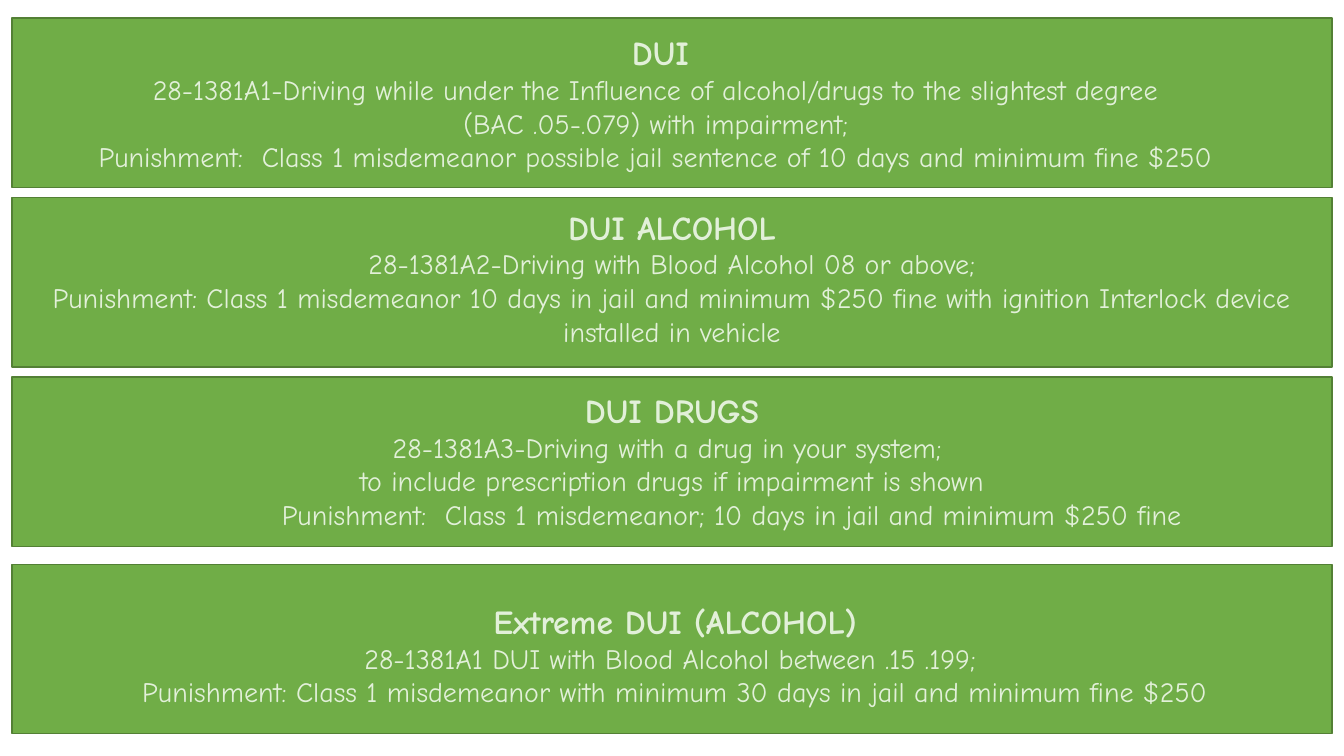
import pptx
import pptx.util
import pptx.dml.color
import pptx.enum.shapes
import pptx.enum.text

WIDTH, HEIGHT = 13.33, 7.5
FONT = "Comic Neue"
GREEN, DARK_GREEN, PALE_GREEN = "70AD47", "538035", "E2F0D9"
PANEL_LEFT, PANEL_WIDTH, PANEL_HEIGHT = 0.12, 13.09, 1.68
LAST_LINE_INDENT = 1.19

# panel top, text place (left, top, width, height), heading, lines, indent of last line
OFFENSES = [
    (0.18, (0.24, 0.27, 12.62, 1.82), "DUI", [
        "28-1381A1-Driving while under the Influence of alcohol/drugs to the slightest degree ",
        "(BAC .05-.079) with impairment; ",
        "Punishment:  Class 1 misdemeanor possible jail sentence of 10 days and minimum fine $250 ",
    ], 0),
    (1.96, (0.18, 2.0, 12.97, 1.82), "DUI ALCOHOL", [
        "28-1381A2-Driving with Blood Alcohol 08 or above;",
        "Punishment: Class 1 misdemeanor 10 days in jail and minimum $250 fine "
        "with ignition Interlock device installed in vehicle",
    ], 0),
    (3.74, (0.18, 3.82, 12.97, 1.85), "DUI DRUGS", [
        "28-1381A3-Driving with a drug in your system; ",
        "to include prescription drugs if impairment is shown",
        "Punishment:  Class 1 misdemeanor; 10 days in jail and minimum $250 fine",
    ], LAST_LINE_INDENT),
    (5.6, (0.24, 5.91, 12.91, 1.51), "Extreme DUI (ALCOHOL)", [
        "28-1381A1 DUI with Blood Alcohol between .15 .199; ",
        "Punishment: Class 1 misdemeanor with minimum 30 days in jail and minimum fine $250",
    ], 0),
]


def color(code):
    return pptx.dml.color.RGBColor.from_string(code)


def inches(*lengths):
    return [pptx.util.Inches(length) for length in lengths]


def add_panel(page, top):
    panel = page.shapes.add_shape(
        pptx.enum.shapes.MSO_SHAPE.RECTANGLE,
        *inches(PANEL_LEFT, top, PANEL_WIDTH, PANEL_HEIGHT))
    panel.shadow.inherit = False
    panel.fill.solid()
    panel.fill.fore_color.rgb = color(GREEN)
    panel.line.color.rgb = color(DARK_GREEN)
    panel.line.width = pptx.util.Pt(1)


def write(para, text, size=20, bold=False, indent=0):
    para.alignment = pptx.enum.text.PP_ALIGN.CENTER
    if indent:
        para._p.get_or_add_pPr().set("marL", str(pptx.util.Inches(indent)))
    span = para.add_run()
    span.text = text
    span.font.name = FONT
    span.font.size = pptx.util.Pt(size)
    span.font.bold = bold
    span.font.color.rgb = color(PALE_GREEN)


def add_offense_text(page, place, heading, lines, last_indent):
    frame = page.shapes.add_textbox(*inches(*place)).text_frame
    frame.word_wrap = True
    frame.auto_size = pptx.enum.text.MSO_AUTO_SIZE.SHAPE_TO_FIT_TEXT
    write(frame.paragraphs[0], heading, size=24, bold=True)
    for line in lines:
        write(frame.add_paragraph(), line,
              indent=last_indent if line == lines[-1] else 0)


def main():
    deck = pptx.Presentation()
    deck.slide_width, deck.slide_height = inches(WIDTH, HEIGHT)
    page = deck.slides.add_slide(deck.slide_layouts[6])
    for top, *_ in OFFENSES:
        add_panel(page, top)
    for _, *offense in OFFENSES:
        add_offense_text(page, *offense)
    deck.save("out.pptx")


if __name__ == "__main__":
    main()
